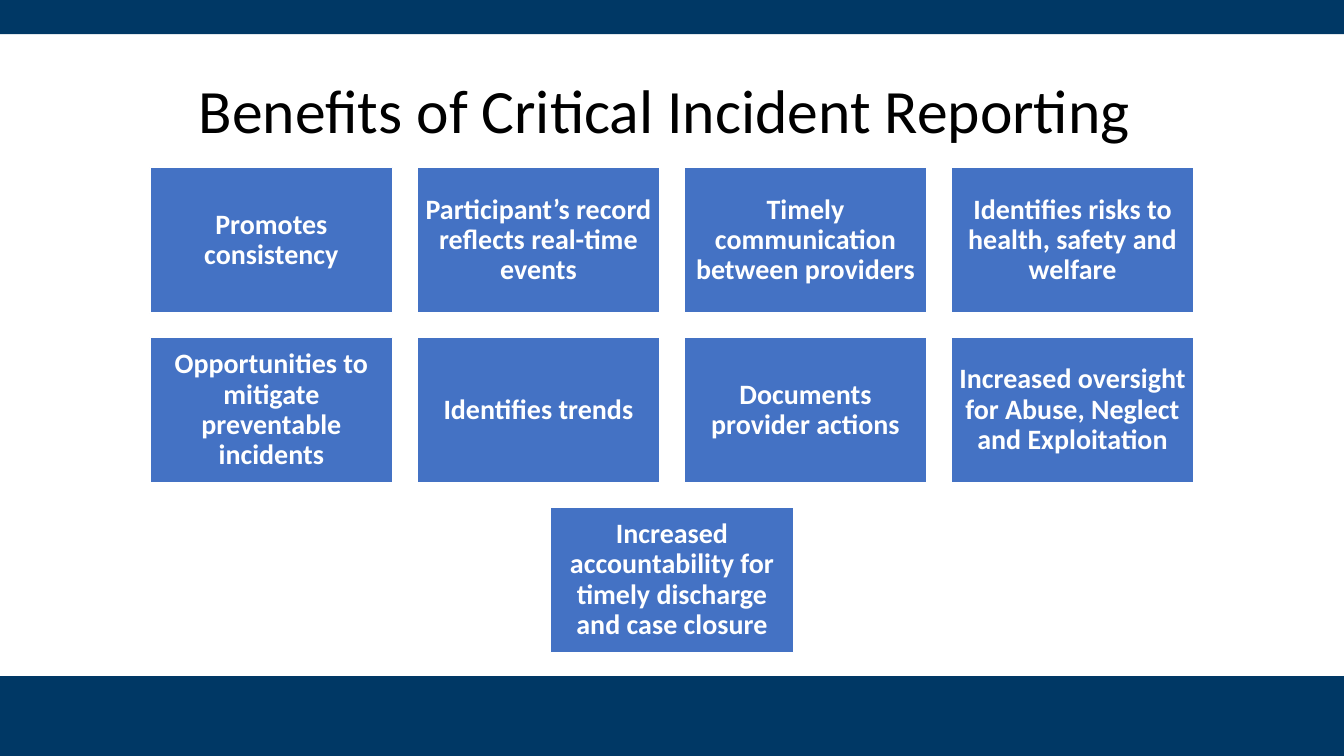
import pptx
import pptx.dml.color
import pptx.enum.shapes
import pptx.enum.text
import pptx.util
from pptx.util import Cm

NAVY = pptx.dml.color.RGBColor(0x00, 0x38, 0x65)
BLUE = pptx.dml.color.RGBColor(0x44, 0x72, 0xC4)
WHITE = pptx.dml.color.RGBColor(0xFF, 0xFF, 0xFF)
BLACK = pptx.dml.color.RGBColor(0x00, 0x00, 0x00)

SLIDE_WIDTH, SLIDE_HEIGHT = Cm(33.87), Cm(19.05)
COLUMNS = 4
CARD_WIDTH, CARD_HEIGHT, CARD_GAP = Cm(6.12), Cm(3.67), Cm(0.61)

BENEFITS = [
    "Promotes consistency",
    "Participant’s record reflects real-time events",
    "Timely communication between providers",
    "Identifies risks to health, safety and welfare",
    "Opportunities to mitigate preventable incidents",
    "Identifies trends",
    "Documents provider actions",
    "Increased oversight for Abuse, Neglect and Exploitation",
    "Increased accountability for timely discharge and case closure",
]


def add_block(slide, left, top, width, height, color):
    """Add a plain filled rectangle without outline or shadow."""
    block = slide.shapes.add_shape(
        pptx.enum.shapes.MSO_SHAPE.RECTANGLE, left, top, width, height)
    block.shadow.inherit = False
    block.fill.solid()
    block.fill.fore_color.rgb = color
    block.line.fill.background()
    return block


def write_centered(frame, text, size, color, bold=False):
    frame.text = text
    frame.word_wrap = True
    frame.vertical_anchor = pptx.enum.text.MSO_ANCHOR.MIDDLE
    paragraph = frame.paragraphs[0]
    paragraph.alignment = pptx.enum.text.PP_ALIGN.CENTER
    paragraph.line_spacing = 0.9
    font = paragraph.runs[0].font
    font.name = "Calibri"
    font.size = pptx.util.Pt(size)
    font.bold = bold
    font.color.rgb = color


def add_title(slide, left, top, width, height):
    title = slide.shapes.add_textbox(left, top, width, height)
    write_centered(title.text_frame,
                   "Benefits of Critical Incident Reporting ", 44, BLACK)


def add_card(slide, left, top, benefit):
    card = add_block(slide, left, top, CARD_WIDTH, CARD_HEIGHT, BLUE)
    card.line.color.rgb = WHITE
    card.line.width = pptx.util.Pt(1)
    frame = card.text_frame
    frame.margin_left = frame.margin_right = Cm(0.2)
    frame.margin_top = frame.margin_bottom = Cm(0.2)
    write_centered(frame, benefit, 20, WHITE, bold=True)


def add_benefit_grid(slide, left, top, width):
    """Lay the cards out in rows, each row centred in the given width."""
    for start in range(0, len(BENEFITS), COLUMNS):
        row = BENEFITS[start:start + COLUMNS]
        row_width = len(row) * (CARD_WIDTH + CARD_GAP) - CARD_GAP
        row_left = left + (width - row_width) // 2
        row_top = top + start // COLUMNS * (CARD_HEIGHT + CARD_GAP)
        for column, benefit in enumerate(row):
            card_left = row_left + column * (CARD_WIDTH + CARD_GAP)
            add_card(slide, card_left, row_top, benefit)


def main():
    deck = pptx.Presentation()
    deck.slide_width, deck.slide_height = SLIDE_WIDTH, SLIDE_HEIGHT
    slide = deck.slides.add_slide(deck.slide_layouts[6])
    footer_top = Cm(17.04)
    add_block(slide, 0, footer_top, SLIDE_WIDTH, SLIDE_HEIGHT - footer_top, NAVY)
    add_block(slide, 0, 0, SLIDE_WIDTH, Cm(0.86), NAVY)
    add_title(slide, Cm(2.33), Cm(1.01), Cm(29.21), Cm(3.68))
    add_benefit_grid(slide, 0, Cm(4.22), SLIDE_WIDTH)
    deck.save("out.pptx")


if __name__ == "__main__":
    main()
